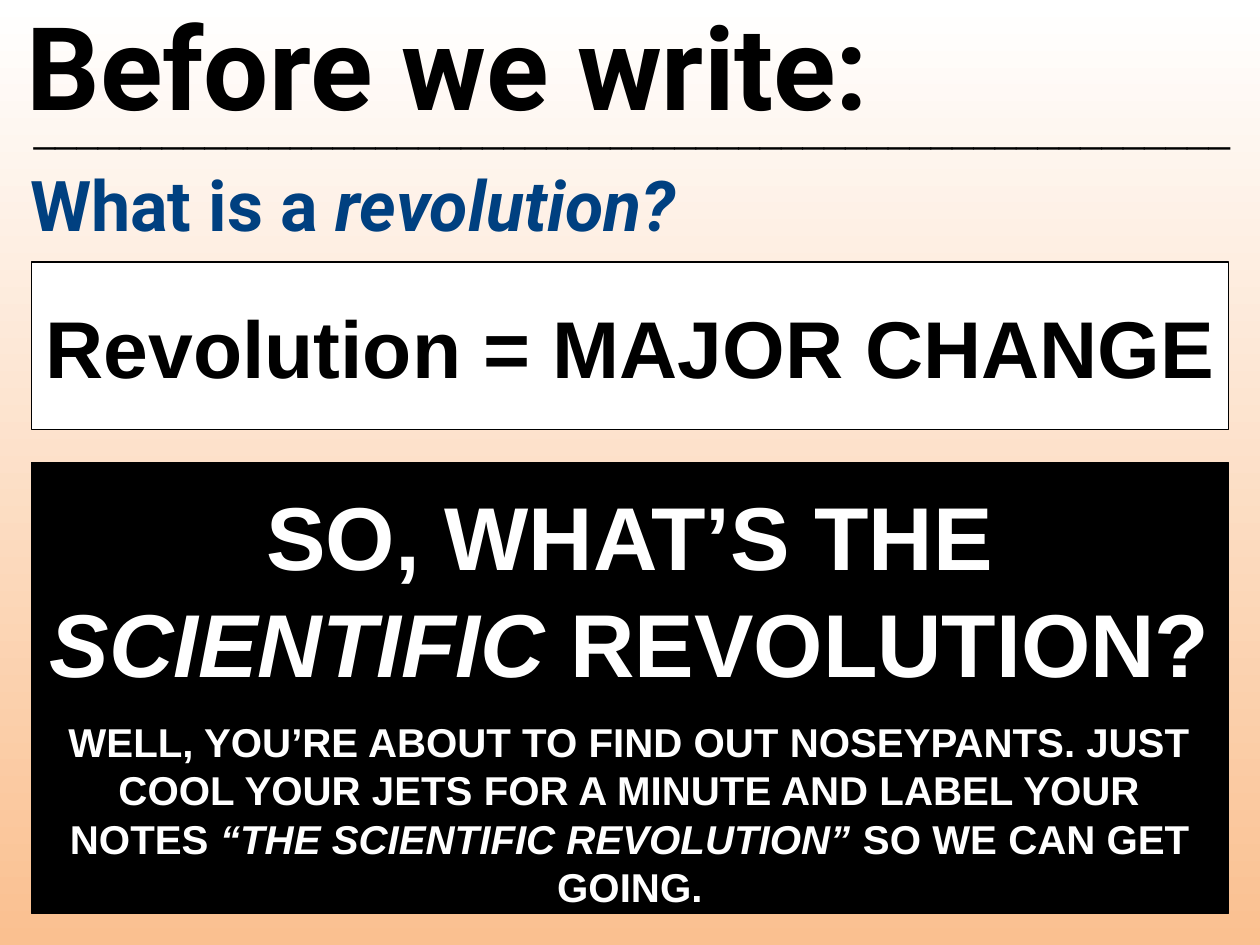
from pptx import Presentation
from pptx.dml.color import RGBColor
from pptx.enum.shapes import MSO_SHAPE as Shape
from pptx.enum.text import MSO_ANCHOR as Anchor, MSO_AUTO_SIZE as AutoSize, PP_ALIGN as Align
from pptx.util import Inches, Pt

BLACK = RGBColor(0x00, 0x00, 0x00)
WHITE = RGBColor(0xFF, 0xFF, 0xFF)
NAVY = RGBColor(0x00, 0x40, 0x80)
PEACH = RGBColor(0xFA, 0xC0, 0x90)

TITLE_ONLY = 5
MARGIN = 0.25
PANEL_WIDTH = 10 - 2 * MARGIN


def paint_background(slide):
    fill = slide.background.fill
    fill.gradient()
    fill.gradient_angle = 90
    for stop, color, position in zip(fill.gradient_stops, (PEACH, WHITE), (0, 1)):
        stop.color.rgb = color
        stop.position = position


def write_runs(frame, pieces, font_name, size, color, align, bold=True):
    paragraph = frame.paragraphs[0]
    paragraph.alignment = align
    for wording, italic in pieces:
        run = paragraph.add_run()
        run.text = wording
        font = run.font
        font.name, font.size = font_name, Pt(size)
        font.bold, font.italic = bold, italic
        font.color.rgb = color


def place_title(slide, box, wording):
    title = slide.shapes.title
    title.left, title.top, title.width, title.height = map(Inches, box)
    frame = title.text_frame
    frame.auto_size = AutoSize.NONE
    frame.word_wrap = False
    frame.vertical_anchor = Anchor.TOP
    write_runs(frame, [(wording, False)], "Roboto", 66, BLACK, Align.LEFT)


def add_line_of_text(slide, box, pieces, font_name, size, color, bold):
    frame = slide.shapes.add_textbox(*map(Inches, box)).text_frame
    frame.word_wrap = False
    write_runs(frame, pieces, font_name, size, color, Align.LEFT, bold)


def add_panel(slide, box, pieces, size, fill_color, text_color):
    panel = slide.shapes.add_shape(Shape.RECTANGLE, *map(Inches, box))
    panel.shadow.inherit = False
    panel.fill.solid()
    panel.fill.fore_color.rgb = fill_color
    panel.line.color.rgb = BLACK
    panel.line.width = Pt(0.75)
    frame = panel.text_frame
    frame.word_wrap = True
    frame.vertical_anchor = Anchor.MIDDLE
    write_runs(frame, pieces, "Arial", size, text_color, Align.CENTER)


def main():
    deck = Presentation()
    deck.slide_width, deck.slide_height = Inches(10), Inches(7.5)
    slide = deck.slides.add_slide(deck.slide_layouts[TITLE_ONLY])
    paint_background(slide)

    place_title(slide, (0.11, -0.09, 7.35, 1.21), "Before we write:")
    add_line_of_text(slide, (0.17, 0.78, 9.81, 0.47), [("_" * 56, False)],
                     "Arial", 22, BLACK, False)
    add_line_of_text(slide, (0.14, 1.23, 5.92, 0.77),
                     [("What is a ", False), ("revolution?", True)],
                     "Roboto", 40, NAVY, True)

    definition = [("Revolution = MAJOR CHANGE", False)]
    question = [("SO, WHAT’S THE ", False), ("SCIENTIFIC ", True), ("REVOLUTION?", False)]
    answer = [
        ("WELL, YOU’RE ABOUT TO FIND OUT NOSEYPANTS. JUST COOL YOUR JETS "
         "FOR A MINUTE AND LABEL YOUR NOTES ", False),
        ("“THE SCIENTIFIC REVOLUTION” ", True),
        ("SO WE CAN GET GOING.", False),
    ]
    for top, height, pieces, size, fill_color, text_color in (
        (2.08, 1.33, definition, 46, WHITE, BLACK),
        (3.67, 2, question, 51, BLACK, WHITE),
        (5.67, 1.58, answer, 23, BLACK, WHITE),
    ):
        add_panel(slide, (MARGIN, top, PANEL_WIDTH, height), pieces, size,
                  fill_color, text_color)

    deck.save("out.pptx")


if __name__ == "__main__":
    main()
